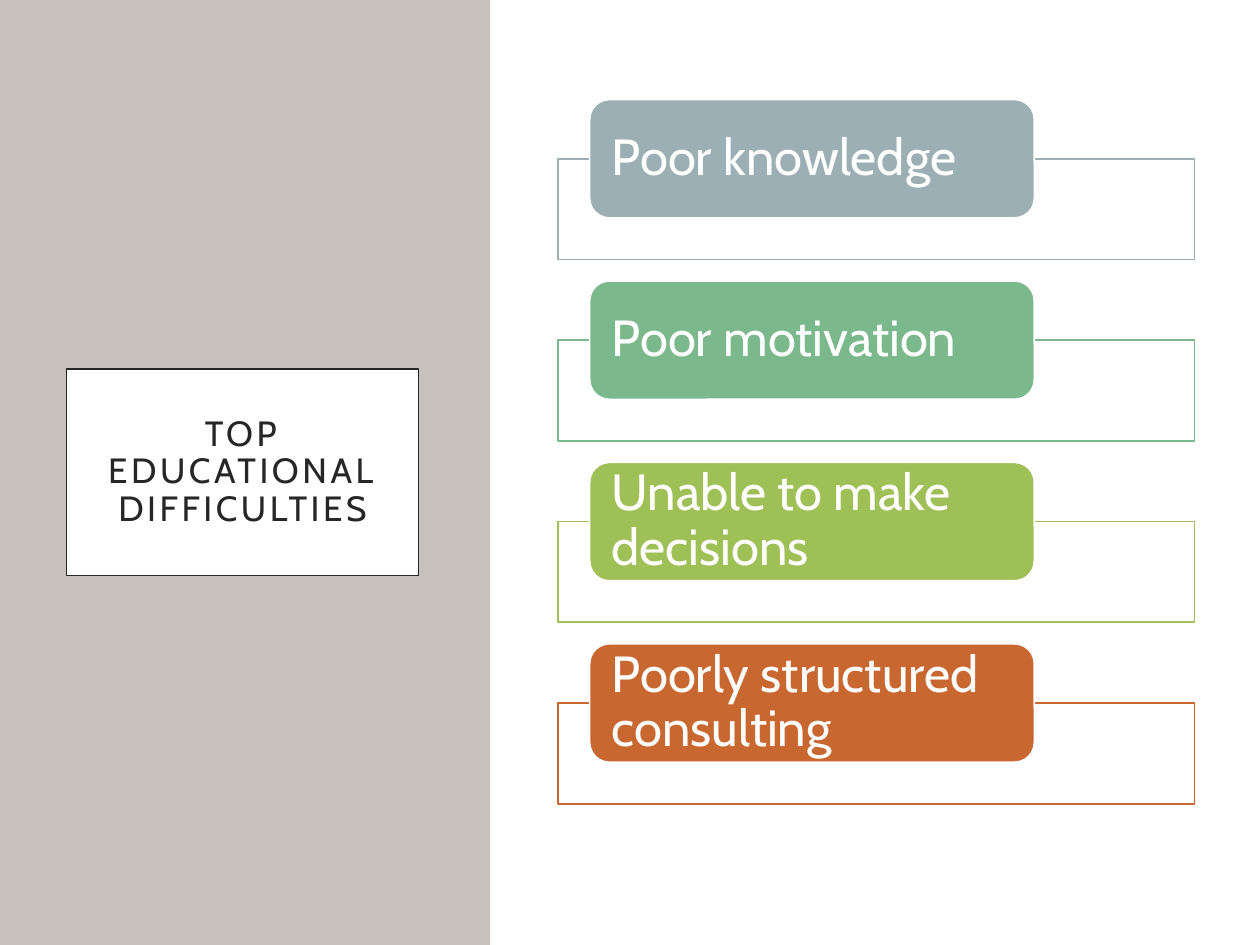
"""Build a slide listing the top educational difficulties."""
from pptx import Presentation
from pptx.dml.color import RGBColor
from pptx.enum.shapes import MSO_SHAPE as Shape
from pptx.enum.text import MSO_ANCHOR as Anchor, PP_ALIGN as Align
from pptx.util import Inches, Pt

COLORS = {
    "panel": "C6C1BA",
    "white": "FFFFFF",
    "ink": "262626",
    "slate": "9BAFB5",
    "green": "7BB88C",
    "lime": "9FC057",
    "rust": "C96731",
}
DIFFICULTIES = [
    ("Poor knowledge", "slate"),
    ("Poor motivation\u00a0".rstrip(), "green"),
    ("Unable to make decisions", "lime"),
    ("Poorly structured consulting", "rust"),
]
ROW_TOP, ROW_STEP = 0.79, 1.44


def add_block(kind, left, top, width, height, fill, line=None, weight=1):
    block = page.shapes.add_shape(
        kind, Inches(left), Inches(top), Inches(width), Inches(height))
    block.shadow.inherit = False
    block.fill.solid()
    block.fill.fore_color.rgb = RGBColor.from_string(COLORS[fill])
    if line:
        block.line.color.rgb = RGBColor.from_string(COLORS[line])
        block.line.width = Pt(weight)
    else:
        block.line.fill.background()
    return block


def write_text(block, text, size, color, align, side, edge):
    frame = block.text_frame
    frame.text = text
    frame.word_wrap = True
    frame.vertical_anchor = Anchor.MIDDLE
    frame.margin_left = frame.margin_right = Inches(side)
    frame.margin_top = frame.margin_bottom = Inches(edge)
    para = frame.paragraphs[0]
    para.alignment = align
    para.line_spacing = 0.9
    span = para.runs[0]
    span.font.name = "Cabin"
    span.font.size = Pt(size)
    span.font.color.rgb = RGBColor.from_string(COLORS[color])
    return span


deck = Presentation()
deck.slide_width, deck.slide_height = Inches(10), Inches(7.5)
page = deck.slides.add_slide(deck.slide_layouts[6])

add_block(Shape.RECTANGLE, 0, 0, 3.89, 7.5, "panel")
title = add_block(Shape.RECTANGLE, 0.53, 2.93, 2.79, 1.64, "white", "ink", 0.75)
title_span = write_text(
    title, "TOP EDUCATIONAL DIFFICULTIES", 20, "ink", Align.CENTER, 0.2, 0.2)
title_span.font._element.set("spc", "200")
title.text_frame.paragraphs[0].space_after = Pt(6)
add_block(Shape.RECTANGLE, 3.9, 0, 6.1, 7.5, "white")

for row, (difficulty, color) in enumerate(DIFFICULTIES):
    top = ROW_TOP + row * ROW_STEP
    add_block(Shape.RECTANGLE, 4.43, top + 0.47, 5.05, 0.8, "white", color)
    label = add_block(Shape.ROUNDED_RECTANGLE, 4.68, top, 3.53, 0.94, color, "white")
    write_text(label, difficulty, 29, "white", Align.LEFT, 0.13, 0)

deck.save("out.pptx")
